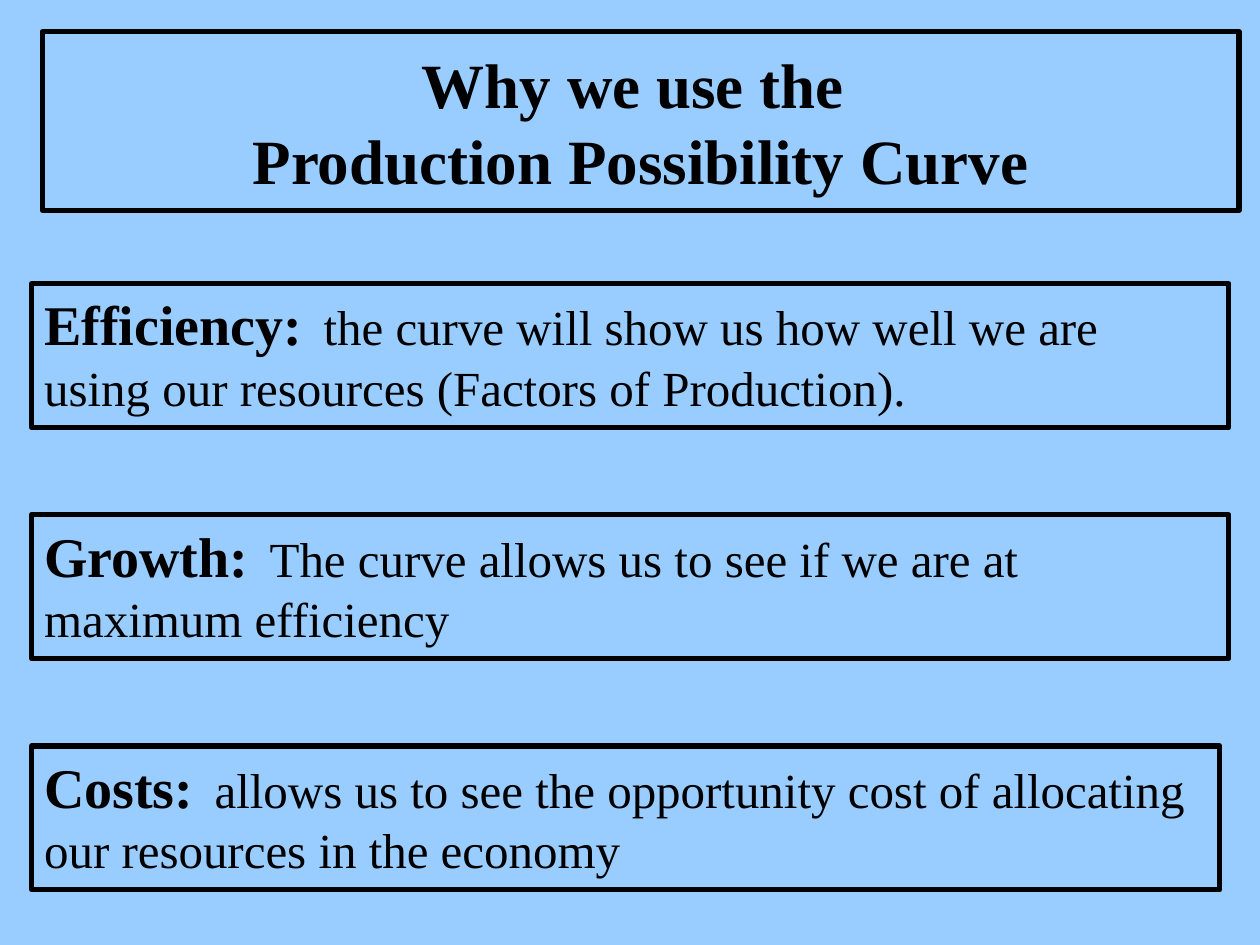
from pptx import Presentation
from pptx.dml.color import RGBColor
from pptx.enum.text import MSO_ANCHOR, MSO_AUTO_SIZE, PP_ALIGN
from pptx.util import Cm, Pt

FONT = "Times New Roman"
INK = "000000"
BACKGROUND = "99CCFF"
TITLE_LINES = ["Why we use the ", "Production Possibility Curve"]
REASON_LEFT, REASON_TOP, REASON_HEIGHT, REASON_STEP = 0.64, 5.72, 2.9, 4.66
# Term, explanation, box width in cm
REASONS = [
    ("Efficiency:", "the curve will show us how well we are using our resources "
     "(Factors of Production).", 24.13),
    ("Growth:", "The curve allows us to see if we are at maximum efficiency", 24.13),
    ("Costs:", "allows us to see the opportunity cost of allocating our resources "
     "in the economy", 23.95),
]


def color(hex_value):
    return RGBColor.from_string(hex_value)


def add_run(paragraph, text, size, bold=False):
    run = paragraph.add_run()
    run.text = text
    run.font.name = FONT
    run.font.size = Pt(size)
    run.font.bold = bold
    run.font.color.rgb = color(INK)
    return run


def outline(shape):
    shape.fill.background()
    shape.line.color.rgb = color(INK)
    shape.line.width = Pt(3)


def place_title(slide, left, top, width, height):
    title = slide.shapes.title
    title.left, title.top = Cm(left), Cm(top)
    title.width, title.height = Cm(width), Cm(height)
    outline(title)
    frame = title.text_frame
    frame.word_wrap = True
    frame.auto_size = MSO_AUTO_SIZE.NONE
    frame.vertical_anchor = MSO_ANCHOR.MIDDLE
    paragraph = frame.paragraphs[0]
    paragraph.alignment = PP_ALIGN.CENTER
    for index, line in enumerate(TITLE_LINES):
        if index:
            paragraph.add_line_break()
        add_run(paragraph, line, 36, bold=True)


def add_reason(slide, term, explanation, left, top, width, height):
    box = slide.shapes.add_textbox(Cm(left), Cm(top), Cm(width), Cm(height))
    outline(box)
    frame = box.text_frame
    frame.word_wrap = True
    frame.auto_size = MSO_AUTO_SIZE.SHAPE_TO_FIT_TEXT
    paragraph = frame.paragraphs[0]
    add_run(paragraph, term, 32, bold=True)
    gap = add_run(paragraph, " ", 24)
    gap._r.get_or_add_rPr().set("spc", "600")  # widens the gap by 6 pt
    add_run(paragraph, explanation, 28)


def main():
    presentation = Presentation()
    presentation.slide_width, presentation.slide_height = Cm(25.4), Cm(19.05)
    slide = presentation.slides.add_slide(presentation.slide_layouts[5])
    slide.background.fill.solid()
    slide.background.fill.fore_color.rgb = color(BACKGROUND)
    place_title(slide, 0.85, 0.64, 24.13, 3.6)
    for index, (term, explanation, width) in enumerate(REASONS):
        add_reason(slide, term, explanation, REASON_LEFT,
                   REASON_TOP + index * REASON_STEP, width, REASON_HEIGHT)
    presentation.save("out.pptx")


if __name__ == "__main__":
    main()
